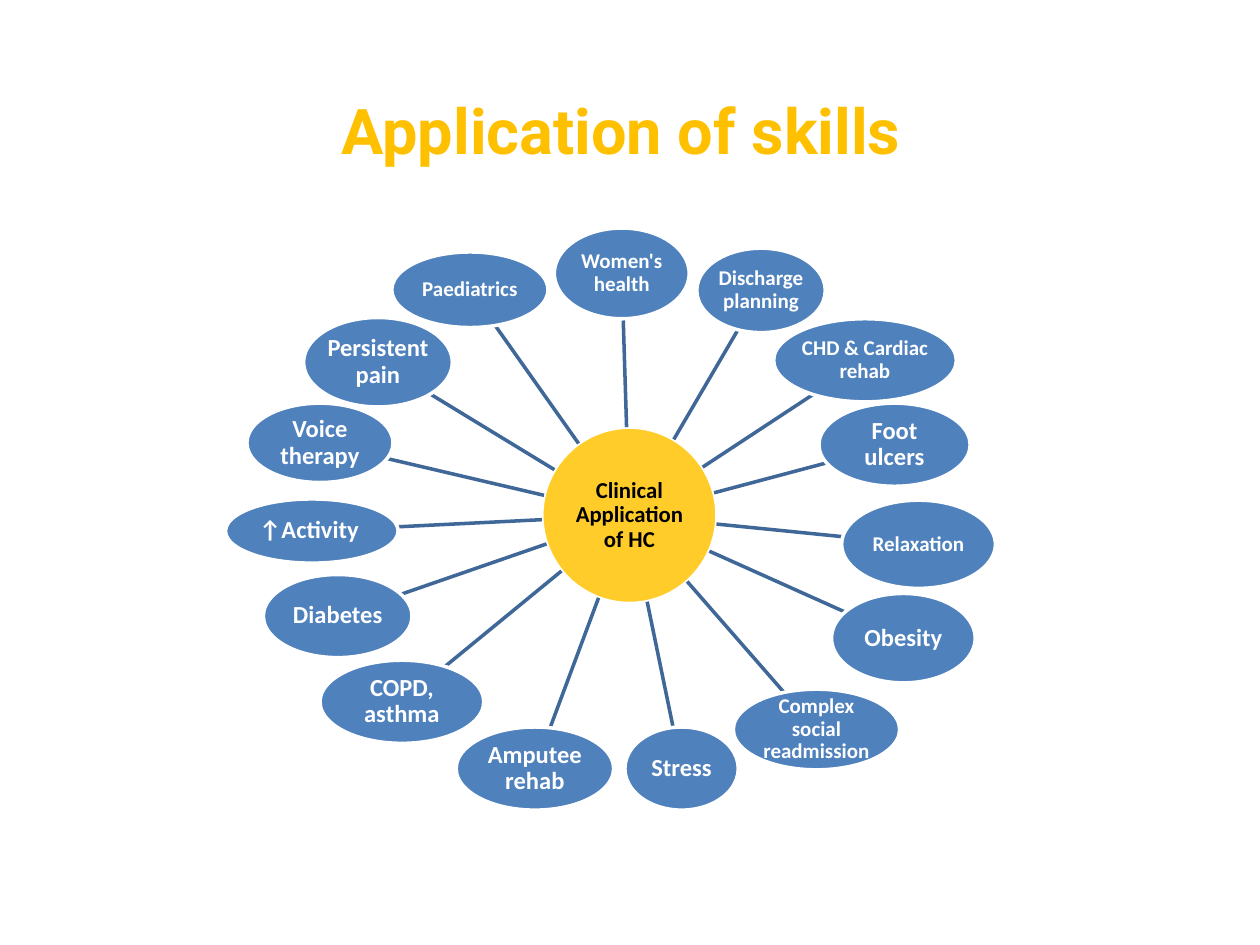
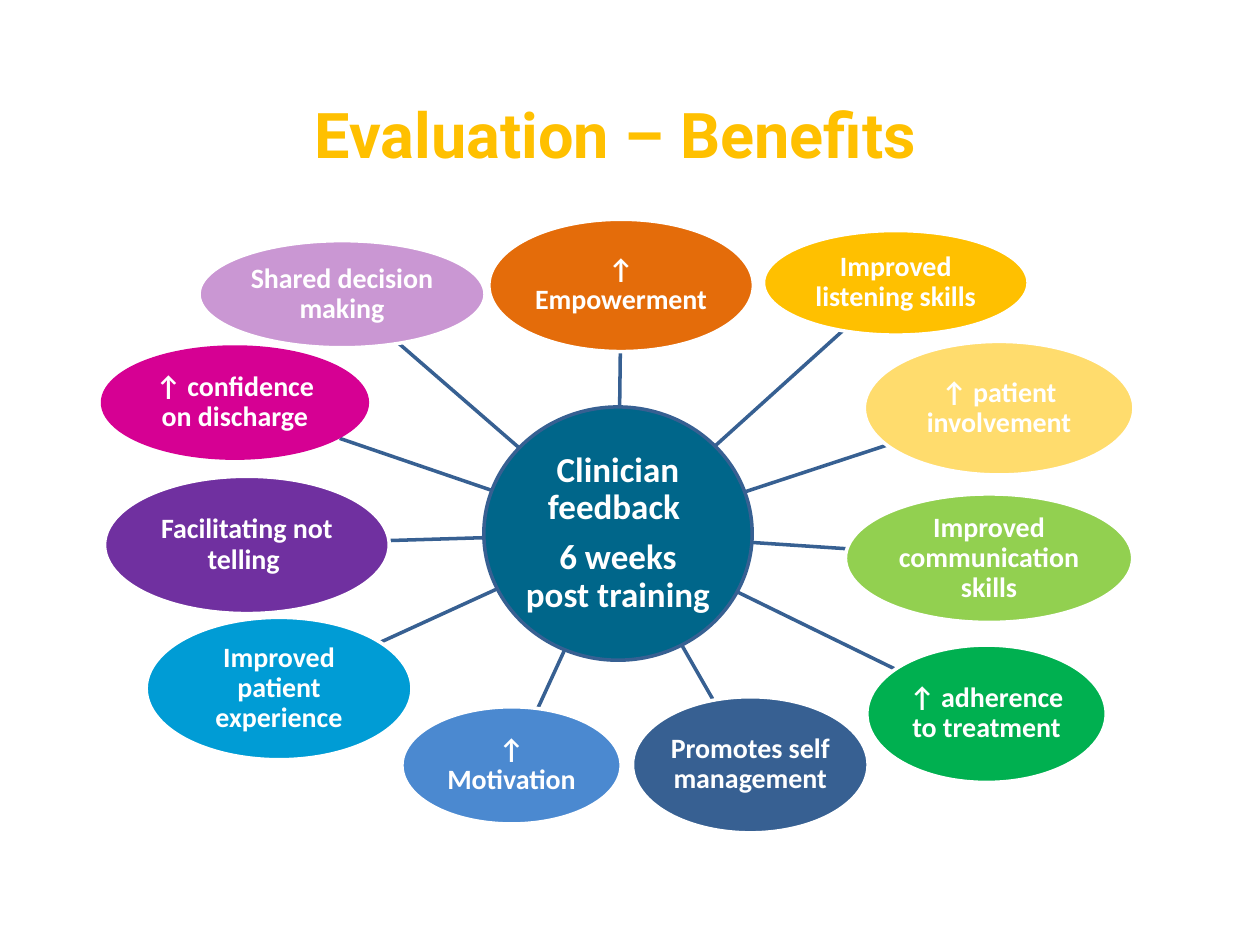
from dataclasses import dataclass
from math import hypot
from typing import NamedTuple

from lxml import etree
from pptx import Presentation
from pptx.dml.color import RGBColor
from pptx.enum.shapes import MSO_CONNECTOR, MSO_SHAPE
from pptx.enum.text import MSO_ANCHOR, PP_ALIGN
from pptx.oxml.ns import qn
from pptx.util import Inches, Pt

OVAL = MSO_SHAPE.OVAL
STRAIGHT = MSO_CONNECTOR.STRAIGHT
MIDDLE = MSO_ANCHOR.MIDDLE
CENTER = PP_ALIGN.CENTER
LEFT = PP_ALIGN.LEFT


@dataclass(frozen=True)
class Theme:
    title_font: str = "Roboto"
    body_font: str = "Calibri"
    title_color: str = "FFC000"
    white: str = "FFFFFF"
    black: str = "000000"
    node_blue: str = "4F81BD"
    spoke_blue: str = "3F6797"
    navy: str = "376092"
    hub_yellow: str = "FFCC29"
    hub_teal: str = "00668A"
    title_size: int = 36
    feedback_hub_size: int = 20
    benefit_size: int = 16
    large: int = 14
    skills_hub_size: int = 13
    small: int = 12
    line_width: int = 2
    line_spacing: float = 0.9
    paragraph_gap: float = 0.35
    oval_inset: float = 0.01


class Box(NamedTuple):
    left: float
    top: float
    width: float
    height: float

    def center(self):
        return self.left + self.width / 2, self.top + self.height / 2

    def edge_towards(self, other):
        """Point where the line to the centre of other leaves this ellipse."""
        x, y = self.center()
        other_x, other_y = other.center()
        dx, dy = other_x - x, other_y - y
        scale = 1 / hypot(dx / (self.width / 2), dy / (self.height / 2))
        return x + dx * scale, y + dy * scale

    def lengths(self):
        return [Inches(value) for value in self]


class Deck:
    def __init__(self, theme):
        self.theme = theme
        self.presentation = Presentation()
        self.presentation.slide_width = Inches(10)
        self.presentation.slide_height = Inches(7.5)
        self.slide = None

    def add_slide(self):
        blank = self.presentation.slide_layouts[6]
        self.slide = self.presentation.slides.add_slide(blank)

    def add_text(self, paragraph, text, font, size, color, alignment):
        paragraph.alignment = alignment
        run = paragraph.add_run()
        run.text = text
        run.font.name = font
        run.font.size = Pt(size)
        run.font.bold = True
        run.font.color.rgb = RGBColor.from_string(color)

    def title(self, text, box, alignment=CENTER):
        frame = self.slide.shapes.add_textbox(*box.lengths()).text_frame
        frame.word_wrap = True
        frame.vertical_anchor = MIDDLE
        theme = self.theme
        self.add_text(frame.paragraphs[0], text, theme.title_font,
                      theme.title_size, theme.title_color, alignment)

    def oval(self, paragraphs, box, size, fill, outline, color):
        theme = self.theme
        shape = self.slide.shapes.add_shape(OVAL, *box.lengths())
        shape.shadow.inherit = False
        shape.fill.solid()
        shape.fill.fore_color.rgb = RGBColor.from_string(fill)
        if outline:
            shape.line.color.rgb = RGBColor.from_string(outline)
            shape.line.width = Pt(theme.line_width)
        else:
            shape.line.fill.background()
        frame = shape.text_frame
        frame.word_wrap = True
        frame.vertical_anchor = MIDDLE
        frame.margin_left = frame.margin_right = Inches(theme.oval_inset)
        frame.margin_top = frame.margin_bottom = Inches(theme.oval_inset)
        for index, text in enumerate(paragraphs):
            paragraph = frame.add_paragraph() if index else frame.paragraphs[0]
            paragraph.line_spacing = theme.line_spacing
            paragraph.space_after = Pt(size * theme.paragraph_gap)
            self.add_text(paragraph, text, theme.body_font, size, color, CENTER)

    def spoke(self, hub, node, color):
        ends = hub.edge_towards(node) + node.edge_towards(hub)
        connector = self.slide.shapes.add_connector(
            STRAIGHT, *[Inches(value) for value in ends])
        connector.line.color.rgb = RGBColor.from_string(color)
        connector.line.width = Pt(self.theme.line_width)
        properties = connector.element.find(qn("p:spPr"))
        etree.SubElement(properties, qn("a:effectLst"))

    def node(self, hub, text, box, size, fill, spoke_color, outline):
        self.spoke(hub, box, spoke_color)
        self.oval([text], box, size, fill, outline, self.theme.white)


def skills_slide(deck):
    theme = deck.theme
    large, small = theme.large, theme.small
    applications = [
        ("Women's health", Box(4.4, 1.81, 1.07, 0.72), small),
        ("Discharge planning", Box(5.53, 1.97, 1.02, 0.67), small),
        ("CHD & Cardiac rehab", Box(6.14, 2.53, 1.45, 0.66), small),
        ("Foot ulcers", Box(6.5, 3.2, 1.2, 0.66), large),
        ("Relaxation", Box(6.68, 3.97, 1.22, 0.7), small),
        ("Obesity", Box(6.6, 4.71, 1.14, 0.71), large),
        ("Complex social readmission", Box(5.82, 5.47, 1.32, 0.64), small),
        ("Stress", Box(4.96, 5.77, 0.9, 0.66), large),
        ("Amputee rehab", Box(3.62, 5.77, 1.25, 0.66), large),
        ("COPD, asthma", Box(2.54, 5.24, 1.3, 0.66), large),
        ("Diabetes", Box(2.09, 4.56, 1.18, 0.66), large),
        ("↑Activity ", Box(1.79, 3.96, 1.37, 0.51), large),
        ("Voice therapy", Box(1.96, 3.2, 1.16, 0.63), large),
        ("Persistent pain", Box(2.41, 2.52, 1.18, 0.71), large),
        ("Paediatrics", Box(3.11, 2, 1.24, 0.6), small),
    ]
    deck.add_slide()
    deck.title("Application of skills", Box(0.43, 0.6, 9, 0.85))
    hub = Box(4.3, 3.39, 1.39, 1.4)
    deck.oval(["Clinical Application of HC"], hub, theme.skills_hub_size,
              theme.hub_yellow, theme.white, theme.black)
    for text, box, size in applications:
        deck.node(hub, text, box, size, theme.node_blue, theme.spoke_blue,
                  theme.white)


def benefits_slide(deck):
    theme = deck.theme
    white = theme.white
    benefits = [
        ("↑ Empowerment", Box(3.88, 1.74, 2.1, 1.05), "E46C0A", white),
        ("Improved listening skills", Box(6.06, 1.83, 2.1, 0.83), "FFC000", white),
        ("↑ patient involvement", Box(6.86, 2.71, 2.14, 1.06), "FFDC6D", white),
        ("Improved communication skills", Box(6.71, 3.92, 2.28, 1.02), "92D050", white),
        ("↑ adherence to treatment", Box(6.88, 5.12, 1.9, 1.09), "00B050", white),
        ("Promotes self management", Box(5.02, 5.53, 1.87, 1.08), theme.navy, white),
        ("↑ Motivation", Box(3.19, 5.61, 1.74, 0.93), "4B89D0", white),
        ("Improved patient experience", Box(1.16, 4.9, 2.11, 1.13), "009CD5", white),
        ("Facilitating not telling ", Box(0.83, 3.78, 2.26, 1.09), "7030A0", white),
        ("↑ confidence on discharge", Box(0.8, 2.74, 2.13, 0.91), "D60093", None),
        ("Shared decision making", Box(1.58, 1.91, 2.27, 0.85), "CA97D3", white),
    ]
    deck.add_slide()
    deck.title("Evaluation – Benefits", Box(2.4, 0.76, 7.49, 0.59), LEFT)
    hub = Box(3.84, 3.23, 2.13, 2.01)
    deck.oval(["Clinician feedback ", "6 weeks post training"], hub,
              theme.feedback_hub_size, theme.hub_teal, theme.navy, white)
    for text, box, fill, outline in benefits:
        deck.node(hub, text, box, theme.benefit_size, fill, theme.navy, outline)


def main():
    deck = Deck(Theme())
    skills_slide(deck)
    benefits_slide(deck)
    deck.presentation.save("out.pptx")


if __name__ == "__main__":
    main()
